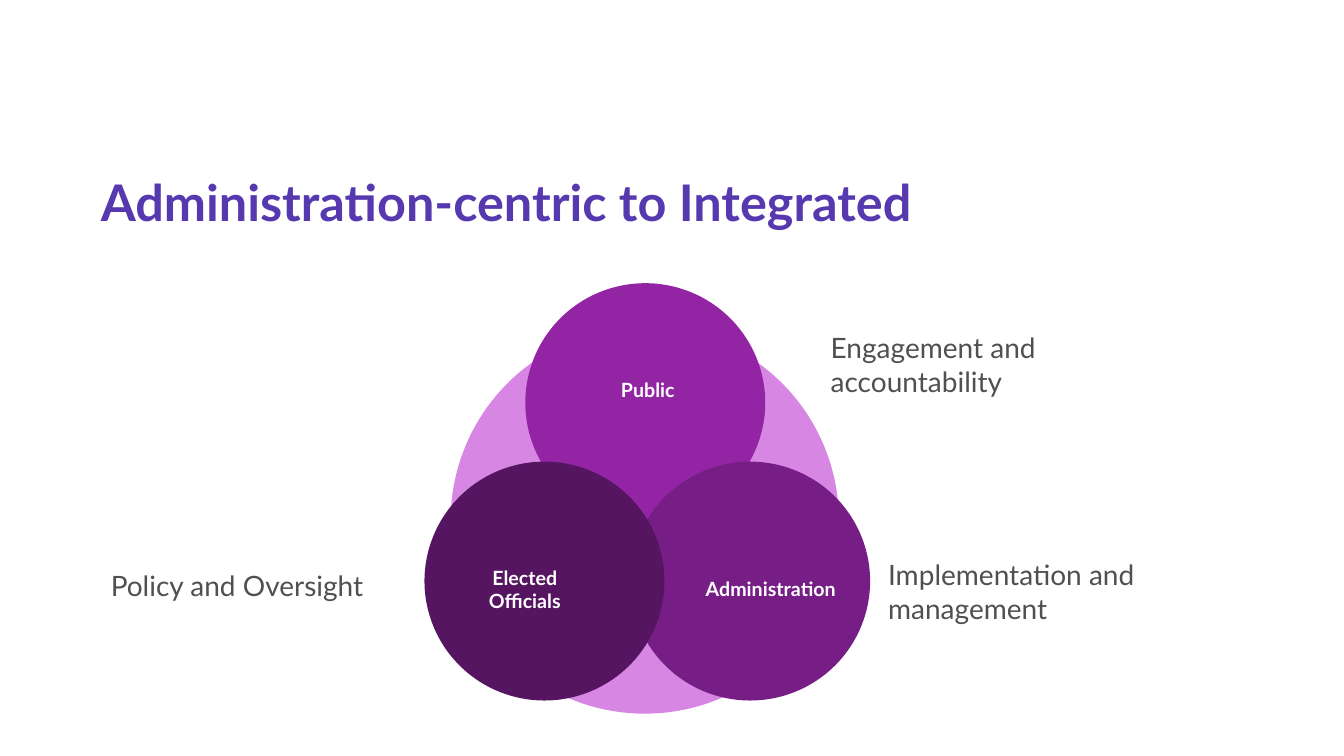
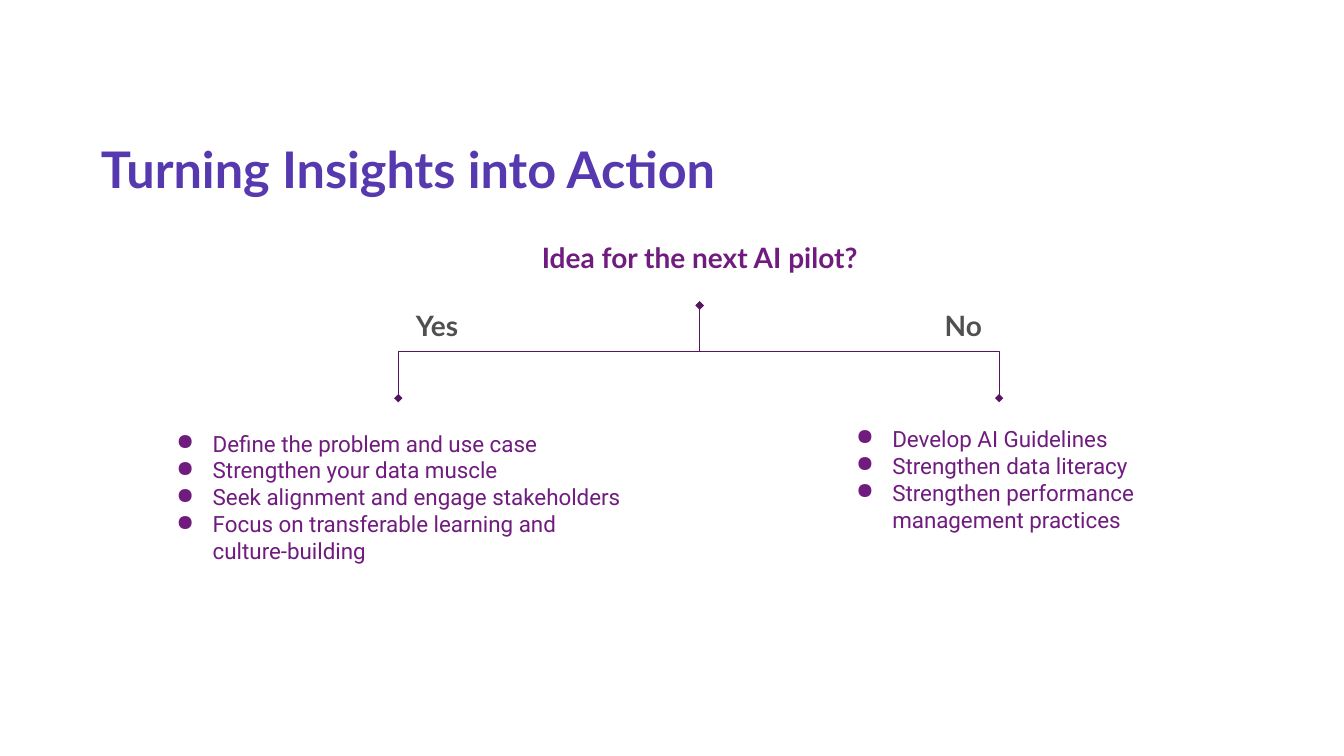
from lxml import etree
from pptx import Presentation
from pptx.dml.color import RGBColor
from pptx.enum.shapes import MSO_CONNECTOR as Connector, MSO_SHAPE as Shape
from pptx.enum.text import MSO_ANCHOR as Anchor, MSO_AUTO_SIZE as AutoSize, PP_ALIGN as Align
from pptx.oxml.ns import qn
from pptx.util import Inches, Pt

COLORS = {
    "title": "5639AF", "label": "505050", "white": "FFFFFF", "accent": "701C7F",
    "ring": "D786E4", "public": "9325A5", "administration": "771E86", "elected": "561561",
}
TITLE = {"name": "Lato", "size": Pt(36), "bold": True, "color": "title"}
CIRCLE_LABEL = {"name": "Lato", "size": Pt(14), "bold": True, "color": "white"}
ROLE = {"name": "Lato", "size": Pt(20), "bold": False, "color": "label"}
QUESTION = {"name": "Lato", "size": Pt(20), "bold": True, "color": "accent"}
BRANCH = {"name": "Lato", "size": Pt(20), "bold": True, "color": "label"}
STEP = {"name": "Roboto", "size": Pt(16), "bold": False, "color": "accent"}


def write(shape, lines, font_format, inset, anchor, align=Align.LEFT, bullets=False):
    """Fill a shape with one formatted paragraph per line."""
    frame = shape.text_frame
    frame.word_wrap = True
    frame.auto_size = AutoSize.NONE
    frame.vertical_anchor = anchor
    for side in ("left", "top", "right", "bottom"):
        setattr(frame, f"margin_{side}", Inches(inset))
    frame.text = "\n".join(lines)
    for paragraph in frame.paragraphs:
        paragraph.alignment = align
        if bullets:
            properties = paragraph._p.get_or_add_pPr()
            properties.set("marL", str(Inches(0.5)))
            properties.set("indent", str(Inches(-0.36)))
            bullet_color = etree.SubElement(properties, qn("a:buClr"))
            etree.SubElement(bullet_color, qn("a:srgbClr"), val=COLORS[font_format["color"]])
            etree.SubElement(properties, qn("a:buChar"), char="●")
        for key, value in font_format.items():
            if key == "color":
                paragraph.font.color.rgb = RGBColor.from_string(COLORS[value])
            else:
                setattr(paragraph.font, key, value)


def add_text(slide, box, lines, font_format, **options):
    shape = slide.shapes.add_textbox(*map(Inches, box))
    write(shape, lines, font_format, **options)


presentation = Presentation()
presentation.slide_width = Inches(13.33)
presentation.slide_height = Inches(7.5)

slides = []
for text, top in (("Administration-centric to Integrated", 1), ("Turning Insights into Action", 0.67)):
    slide = presentation.slides.add_slide(presentation.slide_layouts[5])
    title = slide.shapes.title
    title.left, title.top, title.width, title.height = map(Inches, (1, top, 11.15, 1.3))
    write(title, [text], TITLE, inset=0, anchor=Anchor.BOTTOM)
    title.text_frame.paragraphs[0].line_spacing = 1.1
    slides.append(slide)
integrated, action = slides

# Overlapping circles
for color, left, top, width, height in (
    ("ring", 4.47, 3.24, 3.85, 3.84),
    ("public", 5.21, 2.81, 2.38, 2.37),
    ("administration", 6.25, 4.58, 2.38, 2.37),
    ("elected", 4.21, 4.58, 2.38, 2.37),
):
    circle = integrated.shapes.add_shape(Shape.OVAL, *map(Inches, (left, top, width, height)))
    circle.shadow.inherit = False
    circle.fill.solid()
    circle.fill.fore_color.rgb = RGBColor.from_string(COLORS[color])
    circle.line.fill.background()

for text, left, top in (
    ("Public", 5.6, 3.48), ("Administration", 6.82, 5.46), ("Elected Officials", 4.38, 5.46),
):
    add_text(integrated, (left, top, 1.65, 0.77), [text], CIRCLE_LABEL,
             inset=0.13, anchor=Anchor.MIDDLE, align=Align.CENTER)

for text, left, top, width in (
    ("Engagement and accountability", 8.14, 3.18, 3.09),
    ("Policy and Oversight", 1, 5.54, 3.09),
    ("Implementation and management", 8.71, 5.43, 3.72),
):
    add_text(integrated, (left, top, width, 0.45), [text], ROLE, inset=0.1, anchor=Anchor.TOP)

# Decision tree: each elbow is laid out sideways, then turned by 270 degrees
ROOT_X, ROOT_Y, LEAF_Y = 6.94, 3.03, 3.95
middle_y = (ROOT_Y + LEAF_Y) / 2
half_drop = (LEAF_Y - ROOT_Y) / 2
for leaf_x in (9.91, 3.95):
    middle_x = (ROOT_X + leaf_x) / 2
    half_span = abs(leaf_x - ROOT_X) / 2
    reach = half_drop if leaf_x > ROOT_X else -half_drop
    elbow = action.shapes.add_connector(
        Connector.ELBOW,
        Inches(middle_x + reach), Inches(middle_y - half_span),
        Inches(middle_x - reach), Inches(middle_y + half_span))
    elbow.line.color.rgb = RGBColor.from_string(COLORS["elected"])
    elbow.line.width = Pt(0.75)
    properties = elbow._element.spPr
    properties.find(qn("a:xfrm")).set("rot", str(270 * 60000))
    line = properties.find(qn("a:ln"))
    for end in ("headEnd", "tailEnd"):
        etree.SubElement(line, qn(f"a:{end}"), type="diamond")
    etree.SubElement(properties, qn("a:effectLst"))

add_text(action, (4.33, 2.08, 5.22, 0.94), ["Idea for the next AI pilot?"], QUESTION,
         inset=0.13, anchor=Anchor.MIDDLE, align=Align.CENTER)

for answer, answer_left, box, steps in (
    ("Yes", 3.89, (1.48, 3.95, 4.95, 1.96), [
        "Define the problem and use case",
        "Strengthen your data muscle",
        "Seek alignment and engage stakeholders",
        "Focus on transferable learning and culture-building",
    ]),
    ("No", 9.11, (8.22, 3.95, 3.38, 1.6), [
        "Develop AI Guidelines",
        "Strengthen data literacy",
        "Strengthen performance management practices",
    ]),
):
    add_text(action, (answer_left, 2.96, 0.89, 0.41), [answer], BRANCH,
             inset=0.1, anchor=Anchor.TOP, align=Align.CENTER)
    add_text(action, box, steps, STEP, inset=0.13, anchor=Anchor.MIDDLE, bullets=True)

presentation.save("out.pptx")
